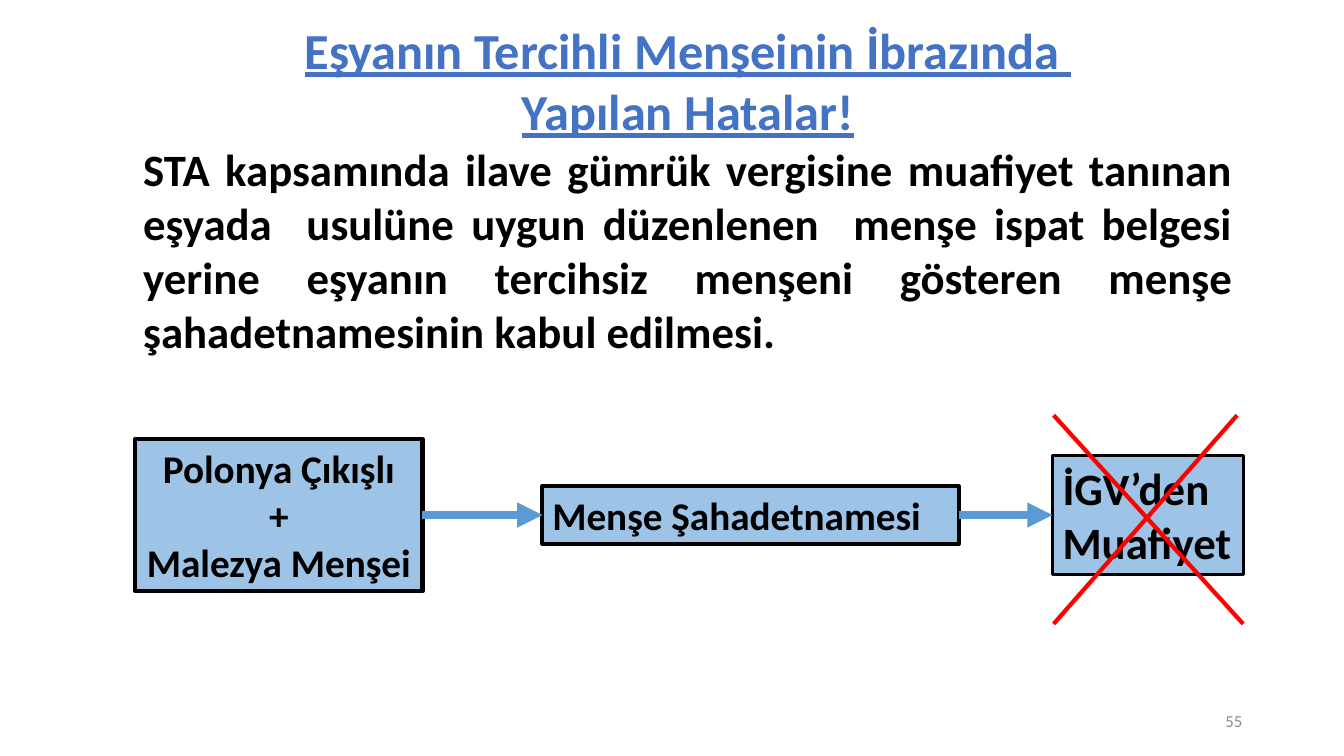
from lxml import etree
from pptx import Presentation
from pptx.dml.color import RGBColor
from pptx.enum.shapes import MSO_CONNECTOR, MSO_SHAPE
from pptx.enum.text import MSO_ANCHOR, MSO_AUTO_SIZE, PP_ALIGN
from pptx.oxml.ns import qn
from pptx.util import Inches, Pt

LEFT, CENTER, RIGHT, JUSTIFY = PP_ALIGN.LEFT, PP_ALIGN.CENTER, PP_ALIGN.RIGHT, PP_ALIGN.JUSTIFY
TOP, MIDDLE = MSO_ANCHOR.TOP, MSO_ANCHOR.MIDDLE
RECTANGLE, STRAIGHT = MSO_SHAPE.RECTANGLE, MSO_CONNECTOR.STRAIGHT
NO_AUTOFIT = MSO_AUTO_SIZE.NONE
RIGHT_SIDE, LEFT_SIDE = 3, 1

COLORS = {
    "title": "4472C4",
    "text": "000000",
    "box": "9DC3E6",
    "arrow": "5B9BD5",
    "cross": "FF0000",
    "number": "8C8C8C",
}


def write(shape, lines, size, color, align, anchor=TOP, wrap=True, bold=True, underline=False):
    frame = shape.text_frame
    frame.text = "\n".join(lines)
    frame.auto_size = NO_AUTOFIT
    frame.word_wrap = wrap
    frame.vertical_anchor = anchor
    font_format = {"name": "Calibri", "size": Pt(size), "bold": bold, "underline": underline}
    for para in frame.paragraphs:
        para.alignment = align
        para.space_before = Pt(0)
        for span in para.runs:
            for name, value in font_format.items():
                setattr(span.font, name, value)
            span.font.color.rgb = RGBColor.from_string(COLORS[color])


def draw_line(start, end, color, width):
    points = [Inches(value) for value in (*start, *end)]
    line = page.shapes.add_connector(STRAIGHT, *points)
    line.line.color.rgb = RGBColor.from_string(COLORS[color])
    line.line.width = Pt(width)
    etree.SubElement(line._element.spPr, qn("a:effectLst"))
    return line


deck = Presentation()
deck.slide_width, deck.slide_height = Inches(13.33), Inches(7.5)
page = deck.slides.add_slide(deck.slide_layouts[1])
title, body = page.placeholders

for holder, top, height in ((title, 0.14, 1.3), (body, 1.36, 2.4)):
    holder.left, holder.top = Inches(1.32), Inches(top)
    holder.width, holder.height = Inches(11.01), Inches(height)

write(title, ["Eşyanın Tercihli Menşeinin İbrazında ", "Yapılan Hatalar!"],
      36, "title", CENTER, underline=True)
write(body, ["STA kapsamında ilave gümrük vergisine muafiyet tanınan eşyada  usulüne uygun "
             "düzenlenen  menşe ispat belgesi yerine eşyanın tercihsiz menşeni gösteren menşe "
             "şahadetnamesinin kabul edilmesi. "], 32, "text", JUSTIFY)
properties = body.text_frame.paragraphs[0]._p.get_or_add_pPr()
properties.set("marL", "0")
properties.set("indent", "0")
etree.SubElement(properties, qn("a:buNone"))

steps = [
    (1.34, 2.85, 1.51, 3, ["Polonya Çıkışlı", "+", "Malezya Menşei"], 28, CENTER, False),
    (5.38, 4.13, 0.57, 3, ["Menşe Şahadetnamesi"], 28, LEFT, True),
    (10.44, 1.89, 1.18, 2.25, ["İGV’den", "Muafiyet"], 32, LEFT, False),
]
flow_middle = 5.11
boxes = []
for left, width, height, border, lines, size, align, wrap in steps:
    box = page.shapes.add_shape(RECTANGLE, Inches(left), Inches(flow_middle - height / 2),
                                Inches(width), Inches(height))
    box.shadow.inherit = False
    box.fill.solid()
    box.fill.fore_color.rgb = RGBColor.from_string(COLORS["box"])
    box.line.color.rgb = RGBColor.from_string(COLORS["text"])
    box.line.width = Pt(border)
    write(box, lines, size, "text", align, wrap=wrap)
    boxes.append(box)

for start, end in (((10.45, 4.12), (12.33, 6.19)), ((12.27, 4.12), (10.45, 6.19))):
    draw_line(start, end, "cross", 3)

for source, target in zip(boxes, boxes[1:]):
    arrow = draw_line((0, 0), (1, 1), "arrow", 6)
    arrow.begin_connect(source, RIGHT_SIDE)
    arrow.end_connect(target, LEFT_SIDE)
    etree.SubElement(arrow.line._get_or_add_ln(), qn("a:tailEnd"), type="triangle")

number = page.shapes.add_textbox(Inches(9.42), Inches(6.95), Inches(3), Inches(0.4))
write(number, ["55"], 12, "number", RIGHT, anchor=MIDDLE, bold=False)

deck.save("out.pptx")
